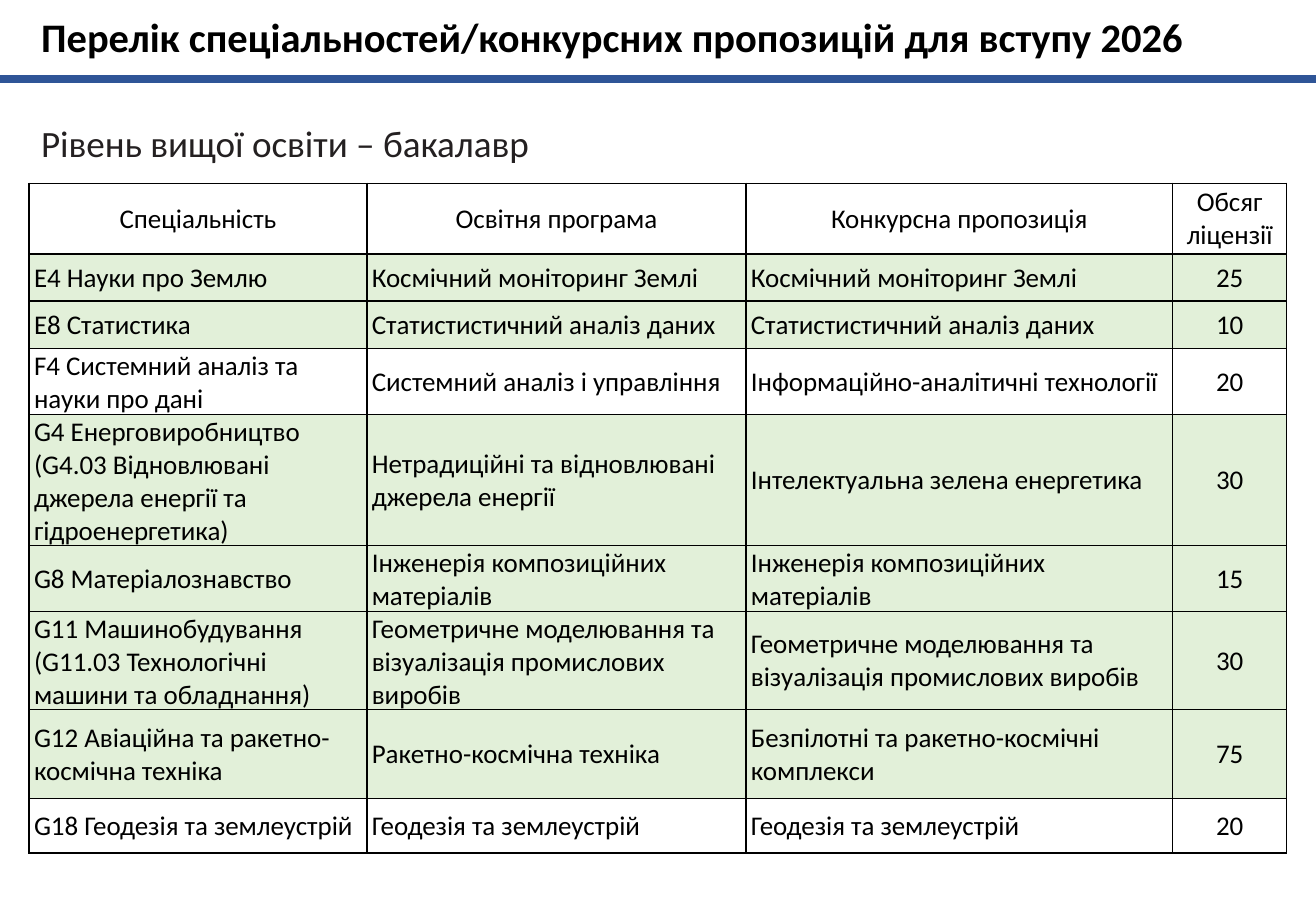
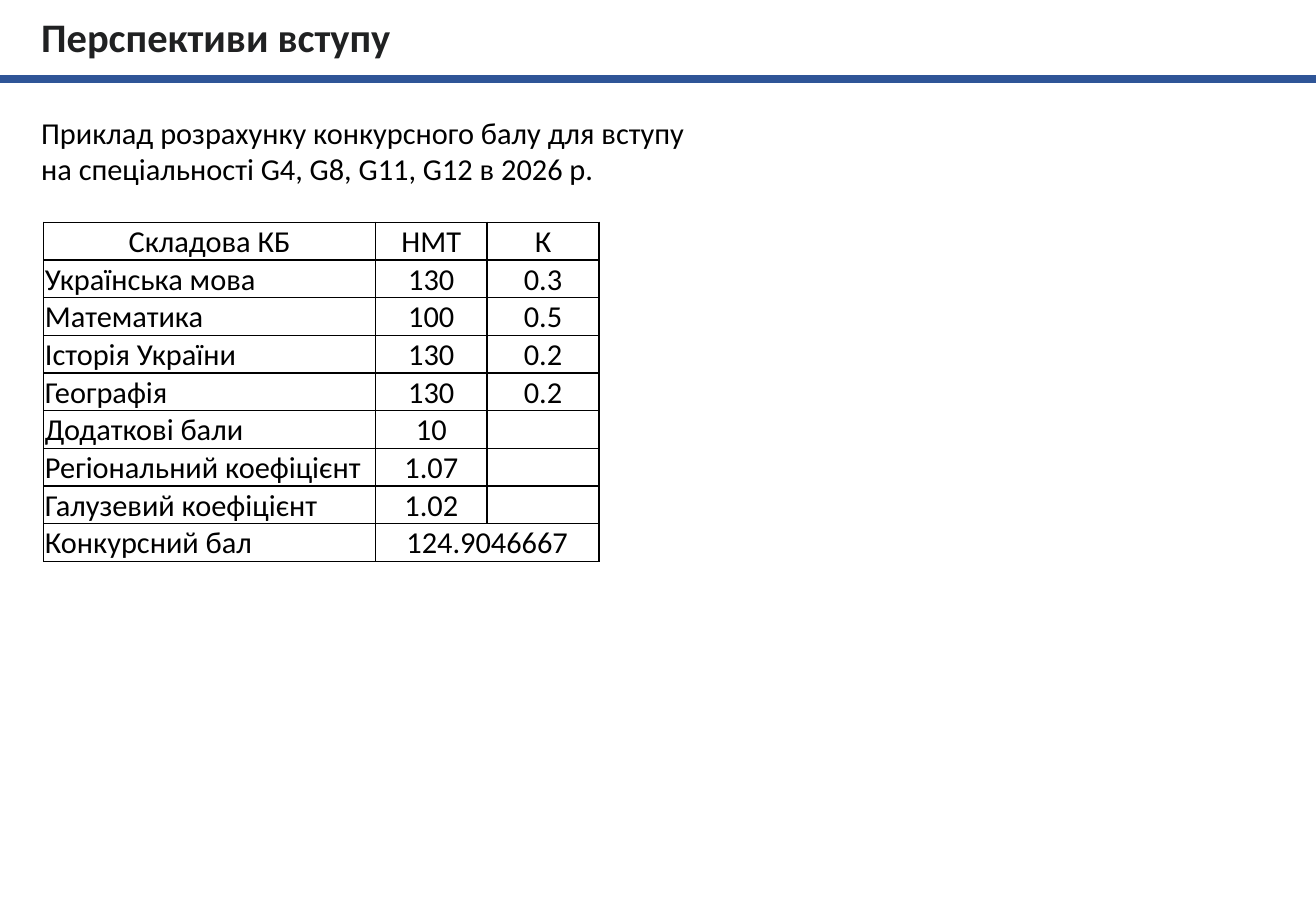
from lxml import etree
from pptx import Presentation
from pptx.dml.color import RGBColor
from pptx.enum.shapes import MSO_CONNECTOR
from pptx.enum.text import MSO_ANCHOR, MSO_AUTO_SIZE, PP_ALIGN
from pptx.oxml import parse_xml
from pptx.oxml.ns import nsdecls, qn
from pptx.util import Inches, Pt

LEFT, CENTER, JUSTIFY = PP_ALIGN.LEFT, PP_ALIGN.CENTER, PP_ALIGN.JUSTIFY
MIDDLE = MSO_ANCHOR.MIDDLE
FIT_SHAPE = MSO_AUTO_SIZE.SHAPE_TO_FIT_TEXT
STRAIGHT = MSO_CONNECTOR.STRAIGHT

BLACK = RGBColor(0x00, 0x00, 0x00)
CHARCOAL = RGBColor(0x20, 0x21, 0x22)
DARK_BROWN = RGBColor(0x24, 0x20, 0x21)
BLUE = RGBColor(0x2F, 0x55, 0x97)
PALE_GREEN = RGBColor(0xE2, 0xF0, 0xD9)

FONT = "Calibri"
SLIDE_WIDTH = 10.83
MARGIN = 0.24
BORDER = (
    '<a:{side} {ns} w="12700"><a:solidFill><a:srgbClr val="{color}"/>'
    "</a:solidFill></a:{side}>"
)

SPECIALTIES = [
    ("Спеціальність", "Освітня програма", "Конкурсна пропозиція", "Обсяг ліцензії"),
    ("E4 Науки про Землю", "Космічний моніторинг Землі",
     "Космічний моніторинг Землі", "25"),
    ("E8 Статистика", "Статистистичний аналіз даних",
     "Статистистичний аналіз даних", "10"),
    ("F4 Системний аналіз та науки про дані", "Системний аналіз і управління",
     "Інформаційно-аналітичні технології", "20"),
    ("G4 Енерговиробництво (G4.03 Відновлювані джерела енергії та гідроенергетика)",
     "Нетрадиційні та відновлювані джерела енергії",
     "Інтелектуальна зелена енергетика", "30"),
    ("G8 Матеріалознавство", "Інженерія композиційних матеріалів",
     "Інженерія композиційних матеріалів", "15"),
    ("G11 Машинобудування (G11.03 Технологічні машини та обладнання)",
     "Геометричне моделювання та візуалізація промислових виробів",
     "Геометричне моделювання та візуалізація промислових виробів", "30"),
    ("G12 Авіаційна та ракетно-космічна техніка", "Ракетно-космічна техніка",
     "Безпілотні та ракетно-космічні комплекси", "75"),
    ("G18 Геодезія та землеустрій", "Геодезія та землеустрій",
     "Геодезія та землеустрій", "20"),
]
SCORES = [
    ("Складова КБ", "НМТ", "К"),
    ("Українська мова", "130", "0.3"),
    ("Математика", "100", "0.5"),
    ("Історія України", "130", "0.2"),
    ("Географія", "130", "0.2"),
    ("Додаткові бали", "10", ""),
    ("Регіональний коефіцієнт", "1.07", ""),
    ("Галузевий коефіцієнт", "1.02", ""),
    ("Конкурсний бал", "124.9046667", ""),
]

SLIDES = [
    {
        "title": ("Перелік спеціальностей/конкурсних пропозицій для вступу 2026", BLACK),
        "intro": ("Рівень вищої освіти – бакалавр", DARK_BROWN, 22),
        "intro_box": (MARGIN, 0.94, 8.33, 0.47),
        "rows": SPECIALTIES,
        "origin": (MARGIN, 1.51),
        "widths": [2.78, 3.12, 3.51, 0.94],
        "heights": [0.58, 0.39, 0.39, 0.54, 1.07, 0.54, 0.81, 0.73, 0.45],
        "size": 16,
        "inset": 0.04,
        "green_rows": {1, 2, 4, 5, 6, 7},
        "centered_from": 3,
        "total_row": None,
    },
    {
        "title": ("Перспективи вступу", CHARCOAL),
        "intro": ("Приклад розрахунку конкурсного балу для вступу "
                  "на спеціальності G4, G8, G11, G12 в 2026 р.", BLACK, 18),
        "intro_box": (MARGIN, 0.89, 5.79, 0.71),
        "rows": SCORES,
        "origin": (0.36, 1.83),
        "widths": [2.73, 0.92, 0.92],
        "heights": [0.31] * len(SCORES),
        "size": 18,
        "inset": 0.01,
        "green_rows": set(),
        "centered_from": 1,
        "total_row": 8,
    },
]


def write(frame, text, color, size, align=LEFT, bold=False):
    paragraph = frame.paragraphs[0]
    paragraph.alignment = align
    run = paragraph.add_run()
    run.text = text
    run.font.name = FONT
    run.font.size = Pt(size)
    run.font.bold = bold
    run.font.color.rgb = color


def add_text(slide, box, text, color, size, align=LEFT, bold=False):
    frame = slide.shapes.add_textbox(*map(Inches, box)).text_frame
    frame.word_wrap = True
    frame.auto_size = FIT_SHAPE
    write(frame, text, color, size, align, bold)


prs = Presentation()
prs.slide_width = Inches(SLIDE_WIDTH)
prs.slide_height = Inches(7.5)

for content in SLIDES:
    slide = prs.slides.add_slide(prs.slide_layouts[6])

    rule = slide.shapes.add_connector(
        STRAIGHT, 0, Inches(0.65), Inches(SLIDE_WIDTH), Inches(0.65))
    rule.line.color.rgb = BLUE
    rule.line.width = Pt(5)
    etree.SubElement(rule._element.spPr, qn("a:effectLst"))

    title, title_color = content["title"]
    add_text(slide, (MARGIN, 0.05, 10.35, 0.5), title, title_color, 24, JUSTIFY, True)
    add_text(slide, content["intro_box"], *content["intro"])

    rows, widths, heights = content["rows"], content["widths"], content["heights"]
    left, top = content["origin"]
    table = slide.shapes.add_table(
        len(rows), len(widths), Inches(left), Inches(top),
        Inches(sum(widths)), Inches(sum(heights))).table
    table.first_row = False
    table.horz_banding = False
    for column, width in zip(table.columns, widths):
        column.width = Inches(width)
    for row, height in zip(table.rows, heights):
        row.height = Inches(height)

    for r, values in enumerate(rows):
        for c, value in enumerate(values):
            cell = table.cell(r, c)
            cell.vertical_anchor = MIDDLE
            cell.margin_left = cell.margin_right = Inches(content["inset"])
            cell.margin_top = Inches(0.01)
            cell.margin_bottom = 0
            for side in ("lnL", "lnR", "lnT", "lnB"):
                cell._tc.get_or_add_tcPr().append(parse_xml(
                    BORDER.format(side=side, ns=nsdecls("a"), color=BLACK)))
            if r in content["green_rows"]:
                cell.fill.solid()
                cell.fill.fore_color.rgb = PALE_GREEN
            else:
                cell.fill.background()
            if value:
                centered = r == 0 or c >= content["centered_from"]
                write(cell.text_frame, value, BLACK, content["size"],
                      CENTER if centered else LEFT)

    total_row = content["total_row"]
    if total_row is not None:
        table.cell(total_row, 1).merge(table.cell(total_row, 2))

prs.save("out.pptx")
